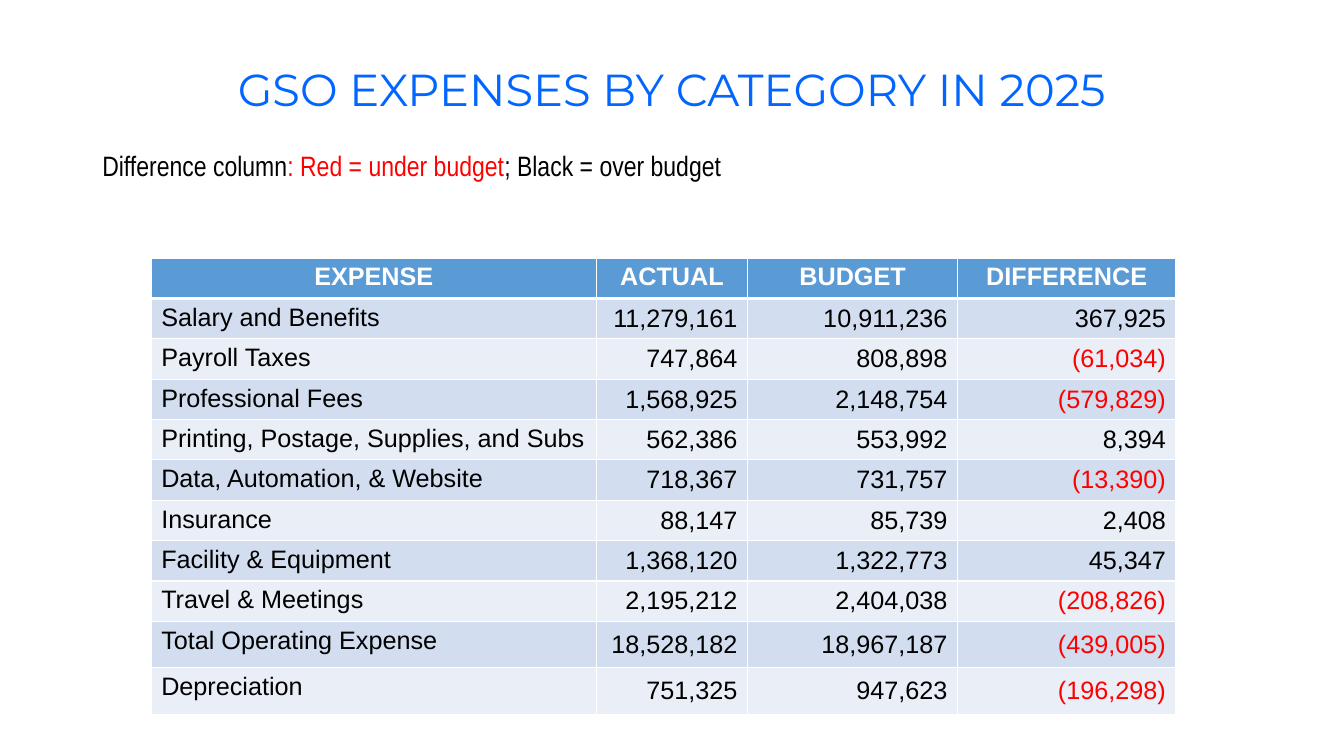
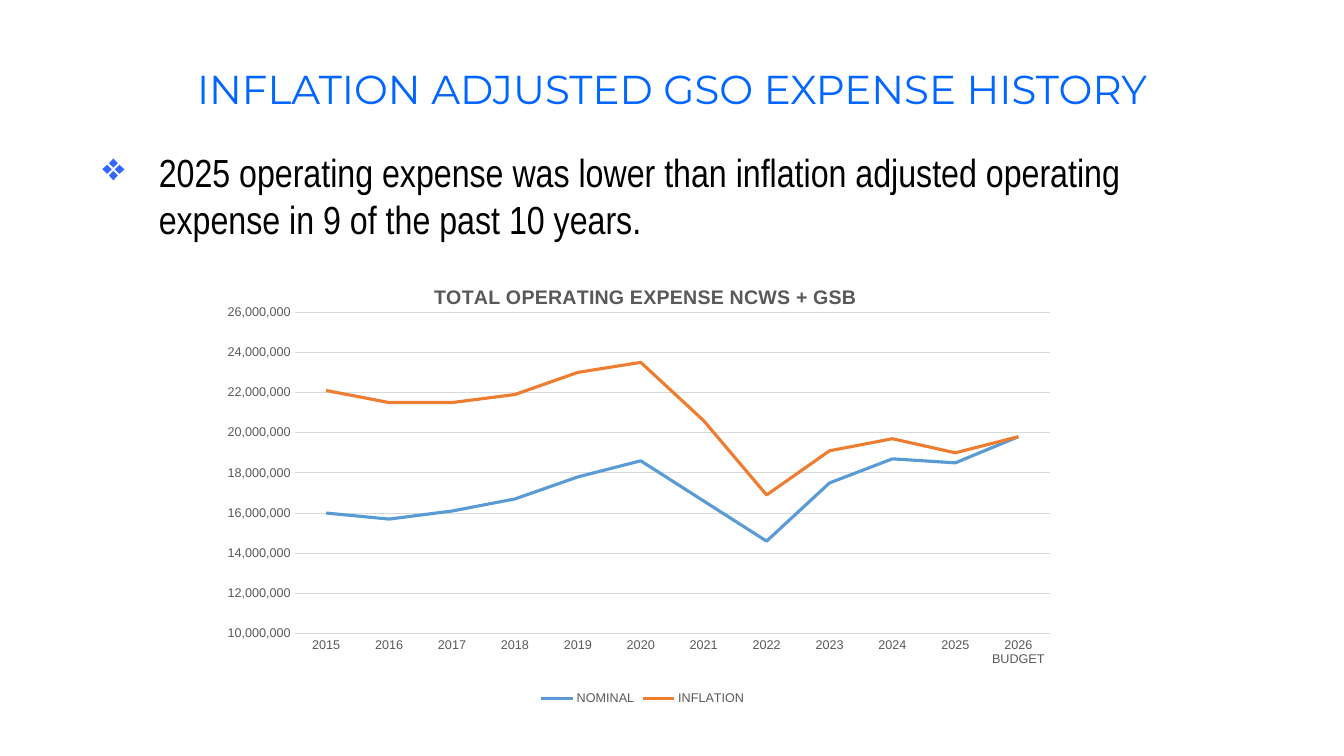
from lxml.etree import SubElement
from pptx import Presentation
from pptx.chart.data import CategoryChartData
from pptx.dml.color import RGBColor
from pptx.enum.chart import XL_CHART_TYPE, XL_LEGEND_POSITION, XL_TICK_MARK
from pptx.enum.text import MSO_ANCHOR, PP_ALIGN
from pptx.oxml import parse_xml
from pptx.oxml.ns import nsdecls, qn
from pptx.util import Inches, Pt

# Shared style
COLS, ROWS = 160, 90
BLACK, WHITE, RED = "000000", "FFFFFF", "FF0000"
TITLE_BLUE, BULLET_BLUE = "0066FF", "3366FF"
HEADER, BANDS = "5B9BD5", ("D2DEEF", "EAEFF7")
GREY, GRID = "595959", "D9D9D9"
TITLE = dict(name="Montserrat", color=TITLE_BLUE)
BODY = dict(name="Arial Narrow", color=BLACK)
CELL = dict(name="Arial", size=18, bold=False, color=BLACK)
AXIS = dict(name="Arial", size=9, bold=False, color=GREY)
TITLE_BOX = (11, 4.8, 138, 12.24)
BODY_BOX = (11, 17.04, 138, 66)


def rgb(value):
    return RGBColor.from_string(value)


def set_font(font, fmt):
    for key, value in fmt.items():
        if key == "color":
            font.color.rgb = rgb(value)
        else:
            setattr(font, key, Pt(value) if key == "size" else value)


def set_layout(element, index, **shares):
    """Place a chart part by shares of the chart's size."""
    for old in element.findall(qn("c:layout")):
        element.remove(old)
    items = "".join(f'<c:{k} val="{v}"/>' for k, v in shares.items())
    element.insert(index, parse_xml(
        f'<c:layout {nsdecls("c")}><c:manualLayout>{items}'
        "</c:manualLayout></c:layout>"))


class Deck:
    def __init__(self):
        self.prs = Presentation()
        self.prs.slide_width = Inches(13.33)
        self.prs.slide_height = Inches(7.5)
        self.s = None

    def x(self, cols):
        return round(self.prs.slide_width * cols / COLS)

    def y(self, rows):
        return round(self.prs.slide_height * rows / ROWS)

    def box(self, left, top, width, height):
        return self.x(left), self.y(top), self.x(width), self.y(height)

    def slide(self, title, size):
        self.s = self.prs.slides.add_slide(self.prs.slide_layouts[6])
        p = self.text(TITLE_BOX, [(title, {})], dict(TITLE, size=size),
                      MSO_ANCHOR.MIDDLE)
        p.alignment, p.line_spacing = PP_ALIGN.CENTER, 0.9

    def text(self, box, runs, fmt, anchor=MSO_ANCHOR.TOP):
        tf = self.s.shapes.add_textbox(*self.box(*box)).text_frame
        tf.word_wrap, tf.vertical_anchor = True, anchor
        p = tf.paragraphs[0]
        for text, change in runs:
            r = p.add_run()
            r.text = text
            set_font(r.font, {**fmt, **change})
        return p

    def body(self, runs, size, bullet=None):
        p = self.text(BODY_BOX, runs, dict(BODY, size=size))
        if bullet:
            pPr = p._p.get_or_add_pPr()
            indent = Inches(0.56)
            pPr.set("marL", str(indent))
            pPr.set("indent", str(-indent))
            color = SubElement(pPr, qn("a:buClr"))
            SubElement(color, qn("a:srgbClr"), val=BULLET_BLUE)
            SubElement(pPr, qn("a:buChar"), char=bullet)
        p.space_after = Pt(24)

    def cell(self, cell, text, fill, align, anchor, fmt, bottom=1):
        tcPr = cell._tc.get_or_add_tcPr()
        for side, width in zip("LRTB", (1, 1, 1, bottom)):
            ln = SubElement(tcPr, qn(f"a:ln{side}"), w=str(Pt(width)))
            SubElement(SubElement(ln, qn("a:solidFill")),
                       qn("a:srgbClr"), val=WHITE)
        cell.fill.solid()
        cell.fill.fore_color.rgb = rgb(fill)
        cell.vertical_anchor = anchor
        p = cell.text_frame.paragraphs[0]
        p.alignment = align
        r = p.add_run()
        r.text = text
        set_font(r.font, fmt)

    def table(self, left, top, widths, heights, header, rows):
        table = self.s.shapes.add_table(
            len(heights), len(widths),
            *self.box(left, top, sum(widths), sum(heights))).table
        table.horz_banding = False
        for col, width in zip(table.columns, widths):
            col.width = self.x(width)
        for row, height in zip(table.rows, heights):
            row.height = self.y(height)
        for j, text in enumerate(header):
            self.cell(table.cell(0, j), text, HEADER, PP_ALIGN.CENTER,
                      MSO_ANCHOR.TOP, dict(CELL, bold=True, color=WHITE), 3)
        for i, row in enumerate(rows):
            for j, text in enumerate(row):
                align, anchor = ((PP_ALIGN.RIGHT, MSO_ANCHOR.MIDDLE) if j
                                 else (PP_ALIGN.LEFT, MSO_ANCHOR.TOP))
                color = RED if text.startswith("(") else BLACK
                self.cell(table.cell(i + 1, j), text, BANDS[i % 2], align,
                          anchor, dict(CELL, color=color))

    def line_chart(self, box, title, cats, series, low, high, step):
        data = CategoryChartData(number_format="#,##0")
        data.categories = cats
        for name, _, millions in series:
            data.add_series(name, [round(v * 1e6) for v in millions])
        chart = self.s.shapes.add_chart(
            XL_CHART_TYPE.LINE, *self.box(*box), data).chart
        set_font(chart.font, dict(AXIS, size=10, color=BLACK))

        # Title and plot area
        chart.has_title = True
        r = chart.chart_title.text_frame.paragraphs[0].add_run()
        r.text = title
        set_font(r.font, dict(AXIS, size=14, bold=True))
        set_layout(chart.chart_title._element, 1,
                   xMode="edge", yMode="edge", x=0.25, y=0.04)
        plot = chart.plots[0]
        plot.vary_by_categories = False
        set_layout(chart._chartSpace.chart.plotArea, 0, layoutTarget="inner",
                   xMode="edge", yMode="edge", x=0.09, y=0.11, w=0.89, h=0.72)

        # Legend and axes
        chart.has_legend = True
        chart.legend.position = XL_LEGEND_POSITION.BOTTOM
        chart.legend.include_in_layout = False
        set_font(chart.legend.font, AXIS)
        cat, val = chart.category_axis, chart.value_axis
        for axis in (cat, val):
            axis.major_tick_mark = axis.minor_tick_mark = XL_TICK_MARK.NONE
            set_font(axis.tick_labels.font, AXIS)
        val.minimum_scale, val.maximum_scale, val.major_unit = low, high, step
        val.tick_labels.number_format = "#,##0"
        val.tick_labels.number_format_is_linked = False
        val.format.line.fill.background()
        for line in (cat.format.line, val.major_gridlines.format.line):
            line.color.rgb, line.width = rgb(GRID), Pt(0.75)

        for ser, (_, color, _) in zip(plot.series, series):
            ser.smooth = False
            ser.format.line.color.rgb = rgb(color)
            ser.format.line.width = Pt(2.25)


def main():
    deck = Deck()

    # Expenses by category
    deck.slide("GSO EXPENSES BY CATEGORY IN 2025", 32)
    deck.body([("Difference column", {}),
               (": Red = under budget", dict(color=RED)),
               ("; Black = over budget", {})], 20)
    deck.table(
        18, 30.72, (53, 18, 25, 26),
        (4.8, 4.6, 4.8, 4.8, 4.6, 4.6, 4.8, 4.8, 4.8, 5.55, 5.55),
        ("EXPENSE", "ACTUAL", "BUDGET", "DIFFERENCE"),
        [("Salary and Benefits", "11,279,161", "10,911,236", "367,925"),
         ("Payroll Taxes", "747,864", "808,898", "(61,034)"),
         ("Professional Fees", "1,568,925", "2,148,754", "(579,829)"),
         ("Printing, Postage, Supplies, and Subs",
          "562,386", "553,992", "8,394"),
         ("Data, Automation, & Website", "718,367", "731,757", "(13,390)"),
         ("Insurance", "88,147", "85,739", "2,408"),
         ("Facility & Equipment", "1,368,120", "1,322,773", "45,347"),
         ("Travel & Meetings", "2,195,212", "2,404,038", "(208,826)"),
         ("Total Operating Expense",
          "18,528,182", "18,967,187", "(439,005)"),
         ("Depreciation", "751,325", "947,623", "(196,298)")])

    # Expense history
    deck.slide("INFLATION ADJUSTED GSO EXPENSE HISTORY", 28.8)
    deck.body([("2025 operating expense was lower than inflation adjusted "
                "operating expense in 9 of the past 10 years.", {})], 28, "❖")
    deck.line_chart(
        (26, 31.32, 101, 53.16), "TOTAL OPERATING EXPENSE NCWS + GSB",
        [str(year) for year in range(2015, 2026)] + ["2026 BUDGET"],
        [("NOMINAL", "5B9BD5", (16.0, 15.7, 16.1, 16.7, 17.8, 18.6,
                                16.6, 14.6, 17.5, 18.7, 18.5, 19.8)),
         ("INFLATION", "ED7D31", (22.1, 21.5, 21.5, 21.9, 23.0, 23.5,
                                  20.6, 16.9, 19.1, 19.7, 19.0, 19.8))],
        10_000_000, 26_000_000, 2_000_000)

    deck.prs.save("out.pptx")


if __name__ == "__main__":
    main()
